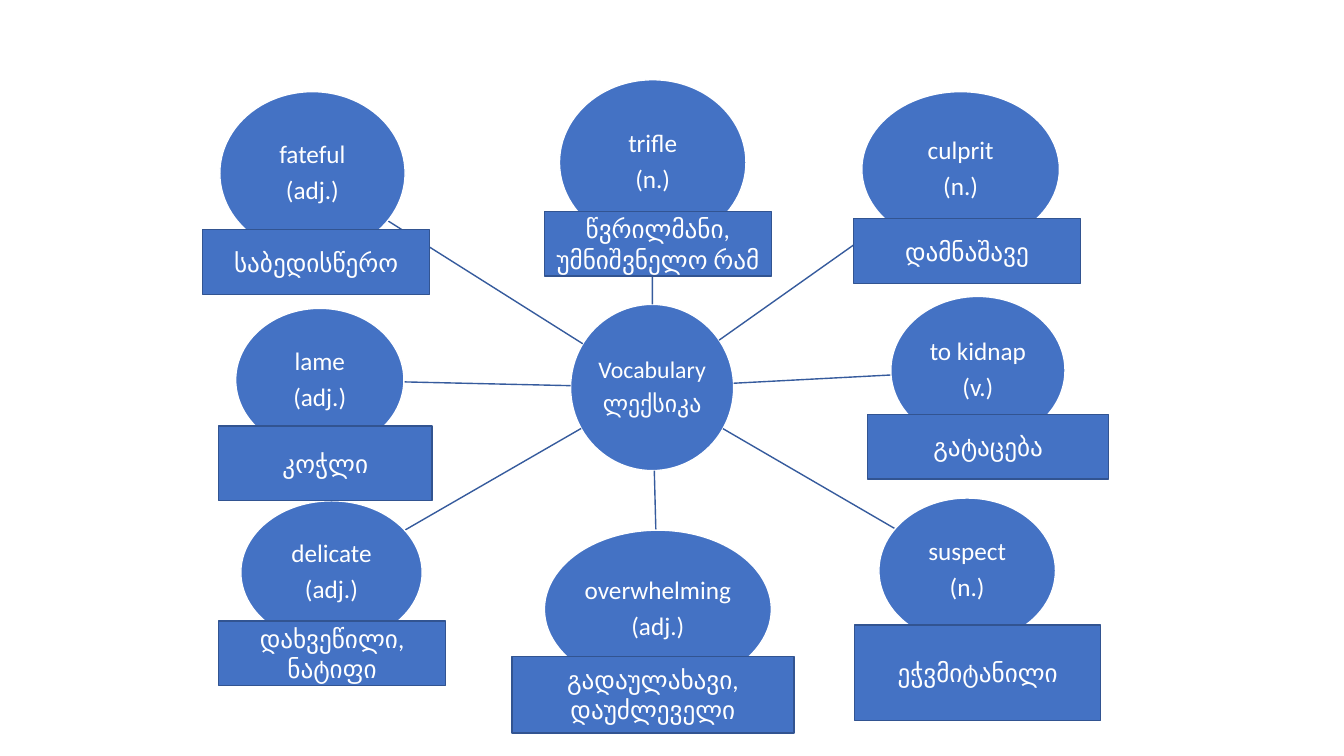
from dataclasses import dataclass
from math import hypot

from lxml import etree
from pptx import Presentation
from pptx.dml.color import RGBColor
from pptx.enum.shapes import MSO_CONNECTOR, MSO_SHAPE
from pptx.enum.text import MSO_ANCHOR, PP_ALIGN
from pptx.oxml.ns import qn
from pptx.util import Cm, Pt

ELLIPSE, RECT = MSO_SHAPE.OVAL, MSO_SHAPE.RECTANGLE
STRAIGHT = MSO_CONNECTOR.STRAIGHT
CENTER, MIDDLE = PP_ALIGN.CENTER, MSO_ANCHOR.MIDDLE


@dataclass(frozen=True)
class Theme:
    font: str = "Calibri"
    fill: RGBColor = RGBColor(0x44, 0x72, 0xC4)
    text: RGBColor = RGBColor(0xFF, 0xFF, 0xFF)
    bubble_line: RGBColor = RGBColor(0xFF, 0xFF, 0xFF)
    label_line: RGBColor = RGBColor(0x32, 0x54, 0x91)
    spoke: RGBColor = RGBColor(0x36, 0x5B, 0x9D)
    hub_size: int = 17
    word_size: int = 18
    line_width: int = 1


@dataclass(frozen=True)
class Box:
    """Left, top, width and height in centimetres."""
    x: float
    y: float
    w: float
    h: float

    def center(self) -> tuple[float, float]:
        return self.x + self.w / 2, self.y + self.h / 2

    def edge_towards(self, other: "Box") -> tuple[float, float]:
        """Point of the inscribed ellipse that faces another box."""
        (cx, cy), (ox, oy) = self.center(), other.center()
        dx, dy = ox - cx, oy - cy
        reach = hypot(dx / (self.w / 2), dy / (self.h / 2))
        return cx + dx / reach, cy + dy / reach


@dataclass(frozen=True)
class Word:
    english: str
    word_class: str
    georgian: str
    bubble: Box
    label: Box


THEME = Theme()
HUB = Box(14.38, 7.67, 4.11, 4.19)

# Clockwise from the top
WORDS = [
    Word("trifle", "(n.)", "წვრილმანი, უმნიშვნელო რამ",
         Box(14.1, 2.01, 4.7, 4.17), Box(13.72, 5.33, 5.72, 1.63)),
    Word("culprit", "(n.)", "დამნაშავე",
         Box(21.72, 2.31, 4.98, 3.91), Box(21.51, 5.51, 5.72, 1.63)),
    Word("to kidnap", "(v.)", "გატაცება",
         Box(22.45, 7.47, 4.39, 3.73), Box(21.87, 10.44, 6.07, 1.63)),
    Word("suspect", "(n.)", "ეჭვმიტანილი",
         Box(22.15, 12.55, 4.45, 3.66), Box(21.54, 15.75, 6.2, 2.41)),
    Word("overwhelming", "(adj.)", "გადაულახავი, დაუძლეველი",
         Box(13.72, 13.36, 5.72, 3.99), Box(12.9, 16.54, 7.11, 1.93)),
    Word("delicate", "(adj.)", "დახვეწილი, ნატიფი",
         Box(6.07, 12.62, 4.57, 3.61), Box(5.51, 15.65, 5.72, 1.63)),
    Word("lame", "(adj.)", "კოჭლი",
         Box(5.94, 7.77, 4.24, 3.61), Box(5.51, 10.74, 5.38, 1.88)),
    Word("fateful", "(adj.)", "საბედისწერო",
         Box(5.54, 2.31, 4.67, 4.11), Box(5.11, 5.79, 5.72, 1.63)),
]


def add_node(slide, kind, box: Box, line: RGBColor, lines: list[str], size: int):
    """Filled shape with centred text."""
    s = slide.shapes.add_shape(kind, Cm(box.x), Cm(box.y), Cm(box.w), Cm(box.h))
    s.shadow.inherit = False
    s.fill.solid()
    s.fill.fore_color.rgb = THEME.fill
    s.line.color.rgb = line
    s.line.width = Pt(THEME.line_width)
    tf = s.text_frame
    tf.word_wrap = True
    tf.vertical_anchor = MIDDLE
    tf.text = "\n".join(lines)
    for p in tf.paragraphs:
        p.alignment = CENTER
        p.font.name = THEME.font
        p.font.size = Pt(size)
        p.font.color.rgb = THEME.text
    return s


def add_bubble(slide, box: Box, lines: list[str], size: int) -> None:
    """Ellipse with narrow margins and loosely spaced lines."""
    tf = add_node(slide, ELLIPSE, box, THEME.bubble_line, lines, size).text_frame
    tf.margin_left = tf.margin_right = tf.margin_top = tf.margin_bottom = Cm(0.03)
    for p in tf.paragraphs:
        p.line_spacing = 0.9
        p.space_after = Pt(size * 0.35)


def add_spoke(slide, bubble: Box) -> None:
    """Line from the hub's edge to a bubble's edge, along their centres."""
    (x1, y1), (x2, y2) = HUB.edge_towards(bubble), bubble.edge_towards(HUB)
    s = slide.shapes.add_connector(STRAIGHT, Cm(x1), Cm(y1), Cm(x2), Cm(y2))
    s.line.color.rgb = THEME.spoke
    s.line.width = Pt(THEME.line_width)
    etree.SubElement(s._element.spPr, qn("a:effectLst"))


def main() -> None:
    prs = Presentation()
    prs.slide_width, prs.slide_height = Cm(33.87), Cm(19.05)
    slide = prs.slides.add_slide(prs.slide_layouts[6])

    # Hub, spokes and English words
    add_bubble(slide, HUB, ["Vocabulary", "ლექსიკა"], THEME.hub_size)
    for word in WORDS:
        add_spoke(slide, word.bubble)
        add_bubble(slide, word.bubble, [word.english, word.word_class],
                   THEME.word_size)

    # Georgian translations on top
    for word in WORDS:
        add_node(slide, RECT, word.label, THEME.label_line, [word.georgian],
                 THEME.word_size)

    prs.save("out.pptx")


if __name__ == "__main__":
    main()
